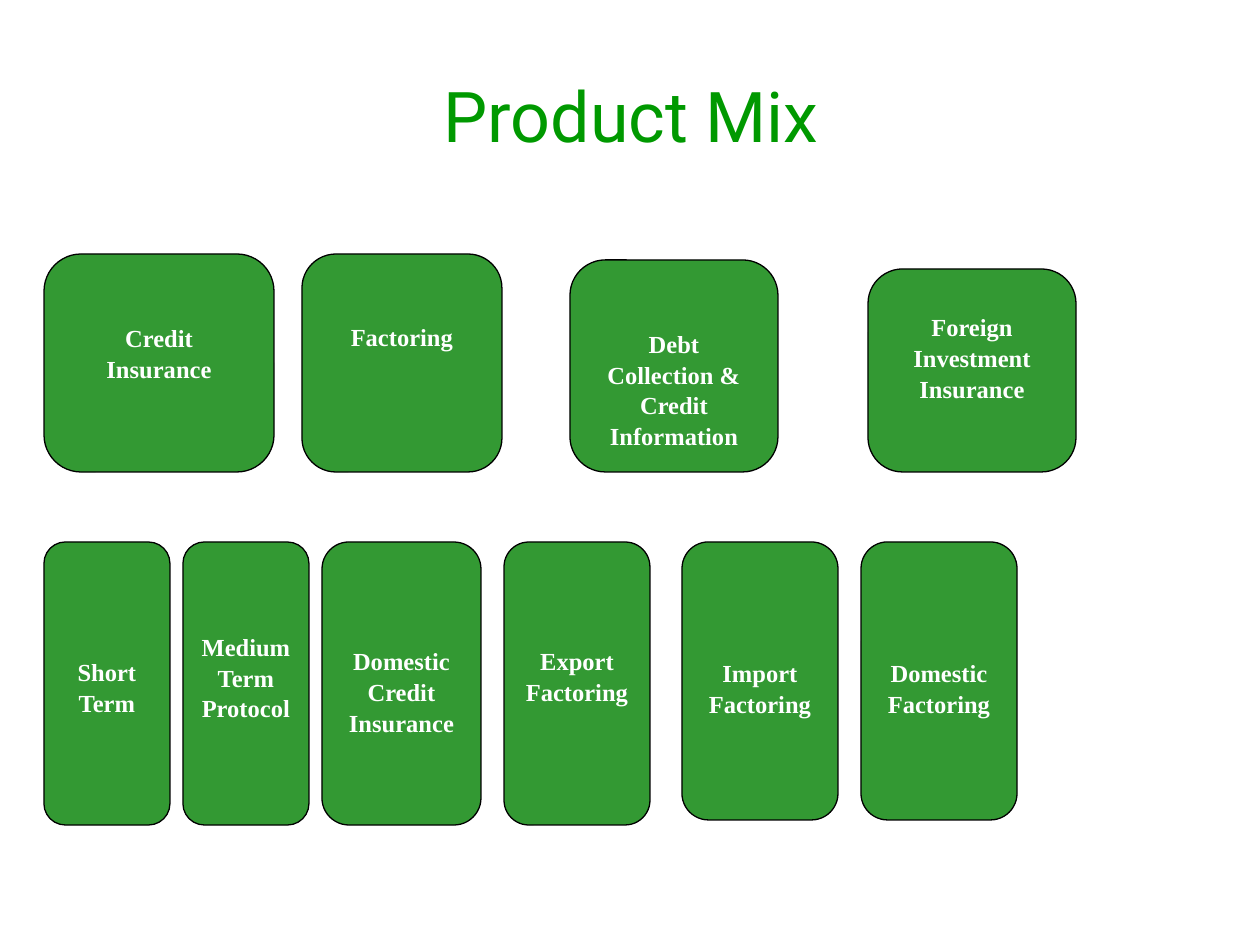
"""Build the Product Mix slide."""
from pptx import Presentation
from pptx import util as u
from pptx.dml.color import RGBColor
from pptx.enum import shapes, text

TITLE_GREEN = RGBColor(0x00, 0x99, 0x00)
BOX_GREEN = RGBColor(0x33, 0x99, 0x33)
BLACK = RGBColor(0, 0, 0)
WHITE = RGBColor(255, 255, 255)
PX = u.Inches(1) / 126

PRODUCTS = [
    (44, 254, 230, 218, 57, ["Credit", "Insurance"]),
    (302, 254, 200, 218, 57, ["Factoring"]),
    (570, 260, 208, 212, 57, ["Debt\vCollection & Credit Information"]),
    (868, 269, 208, 203, 32, ["Foreign Investment Insurance"]),
]
SERVICES = [
    (44, 542, 126, 283, 107, ["Short", "Term"]),
    (183, 542, 126, 283, 82, ["Medium Term", "Protocol"]),
    (322, 542, 159, 283, 95, ["Domestic", "Credit", "Insurance"]),
    (504, 542, 146, 283, 95, ["Export Factoring"]),
    (682, 542, 156, 278, 107, ["Import Factoring"]),
    (861, 542, 156, 278, 107, ["Domestic Factoring"]),
]


def px(length):
    return u.Emu(round(length * PX))


def write(frame, paragraphs, *, font, size, color, bold=False, spacing=1.0):
    for index, content in enumerate(paragraphs):
        paragraph = frame.add_paragraph() if index else frame.paragraphs[0]
        paragraph.text = content
        paragraph.alignment = text.PP_ALIGN.CENTER
        paragraph.line_spacing = spacing
        for run in paragraph.runs:
            run.font.name = font
            run.font.size = u.Pt(size)
            run.font.bold = bold
            run.font.color.rgb = color


class ProductSlide:
    def __init__(self, slide):
        self.slide = slide
        self.box_style = dict(font="Times New Roman", size=14, color=WHITE,
                              bold=True, spacing=1.05)

    def title(self, left, top, width, height, content):
        shape = self.slide.shapes.title
        shape.left, shape.top = px(left), px(top)
        shape.width, shape.height = px(width), px(height)
        shape.text_frame.vertical_anchor = text.MSO_ANCHOR.MIDDLE
        write(shape.text_frame, [content], font="Roboto", size=40, color=TITLE_GREEN)

    def box(self, left, top, width, height, inset, paragraphs):
        shape = self.slide.shapes.add_shape(
            shapes.MSO_SHAPE.ROUNDED_RECTANGLE,
            px(left), px(top), px(width), px(height))
        shape.shadow.inherit = False
        shape.adjustments[0] = 0.17
        shape.fill.solid()
        shape.fill.fore_color.rgb = BOX_GREEN
        shape.line.color.rgb = BLACK
        shape.line.width = u.Pt(0.75)
        frame = shape.text_frame
        frame.word_wrap = True
        frame.vertical_anchor = text.MSO_ANCHOR.TOP
        frame.margin_left = frame.margin_right = px(6)
        frame.margin_top = px(inset)
        write(frame, paragraphs, **self.box_style)


def main():
    presentation = Presentation()
    presentation.slide_width = u.Inches(10)
    presentation.slide_height = u.Inches(7.5)
    layout = presentation.slide_layouts[5]
    page = ProductSlide(presentation.slides.add_slide(layout))
    page.title(64, 35, 1134, 158, "Product Mix")
    for box in PRODUCTS + SERVICES:
        page.box(*box)
    presentation.save("out.pptx")


if __name__ == "__main__":
    main()
